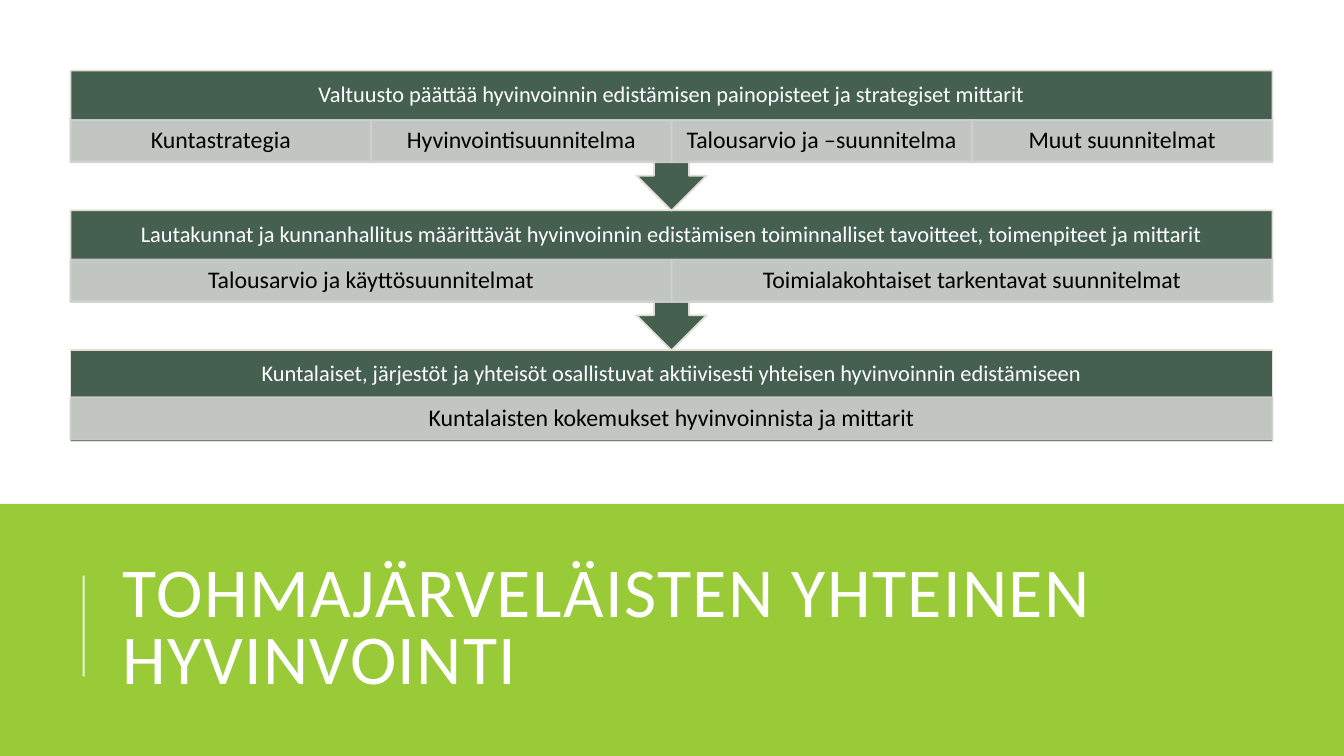
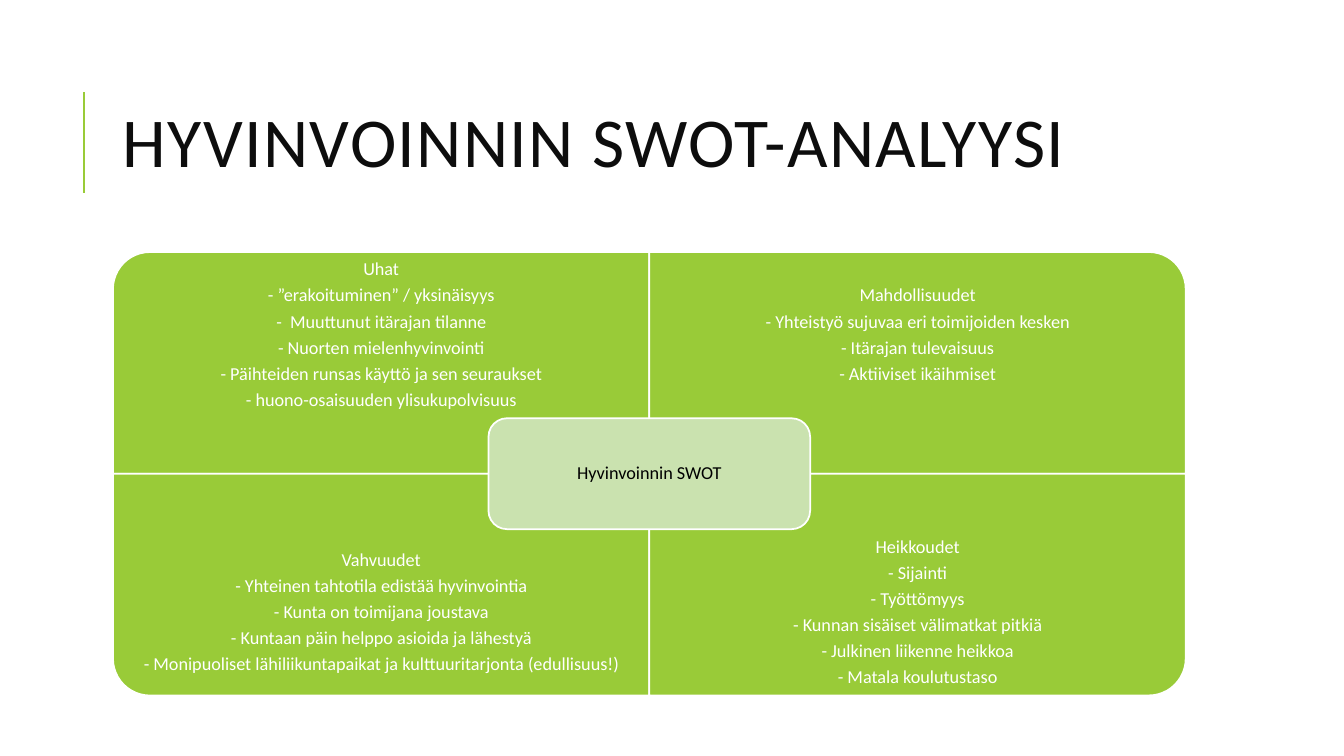
"""Build the municipal wellbeing slides: the decision chain and the SWOT analysis."""
import dataclasses

import lxml.etree
import pptx
import pptx.dml.color
import pptx.enum.shapes
import pptx.enum.text
import pptx.oxml.ns
import pptx.util

Inches = pptx.util.Inches
Pt = pptx.util.Pt
Shapes = pptx.enum.shapes.MSO_SHAPE
Align = pptx.enum.text.PP_ALIGN
Anchor = pptx.enum.text.MSO_ANCHOR
qn = pptx.oxml.ns.qn


@dataclasses.dataclass(frozen=True)
class Theme:
    font: str = "Calibri"
    white: str = "FFFFFF"
    black: str = "000000"
    ink: str = "0D0D0D"
    lime: str = "99CB38"
    pale_lime: str = "CAE2AF"
    forest: str = "455F51"
    sand: str = "E3DED1"
    mist: str = "CFD2D0"
    title_size: int = 50
    detail_size: int = 17
    header_size: int = 16
    swot_size: int = 13
    outline: float = 1.25
    rule: float = 1.5


THEME = Theme()
TITLE_LEFT = 1.12

TIER_LEFT, TIER_WIDTH, TIER_HEIGHT, BAR_HEIGHT = 0.7, 11.92, 1.39, 0.91
TIER_TOP, LAST_TIER_TOP, DETAIL_HEIGHT = 0.7, 3.47, 0.42
TIERS = [
    ("Valtuusto päättää hyvinvoinnin edistämisen painopisteet ja strategiset mittarit",
     ["Kuntastrategia", "Hyvinvointisuunnitelma", "Talousarvio ja –suunnitelma",
      "Muut suunnitelmat"]),
    ("Lautakunnat ja kunnanhallitus määrittävät hyvinvoinnin edistämisen toiminnalliset "
     "tavoitteet, toimenpiteet ja mittarit",
     ["Talousarvio ja käyttösuunnitelmat", "Toimialakohtaiset tarkentavat suunnitelmat"]),
    ("Kuntalaiset, järjestöt ja yhteisöt osallistuvat aktiivisesti yhteisen hyvinvoinnin "
     "edistämiseen",
     ["Kuntalaisten kokemukset hyvinvoinnista ja mittarit"]),
]

SWOT_TOP, QUADRANT_WIDTH, QUADRANT_HEIGHT, QUADRANT_TEXT_HEIGHT = 2.5, 5.32, 2.2, 1.65
CORE_WIDTH, CORE_HEIGHT = 3.19, 1.1
QUADRANTS = [
    (0, 0, 270, ["Uhat", "- ”erakoituminen” / yksinäisyys", "-  Muuttunut itärajan tilanne",
                 "- Nuorten mielenhyvinvointi",
                 "- Päihteiden runsas käyttö ja sen seuraukset",
                 "- huono-osaisuuden ylisukupolvisuus"]),
    (1, 0, 0, ["Mahdollisuudet", "- Yhteistyö sujuvaa eri toimijoiden kesken",
               "- Itärajan tulevaisuus", "- Aktiiviset ikäihmiset"]),
    (0, 1, 180, ["Vahvuudet", "- Yhteinen tahtotila edistää hyvinvointia",
                 "- Kunta on toimijana joustava",
                 "- Kuntaan päin helppo asioida ja lähestyä",
                 "- Monipuoliset lähiliikuntapaikat ja kulttuuritarjonta (edullisuus!)"]),
    (1, 1, 90, ["Heikkoudet", "- Sijainti", "- Työttömyys",
                "- Kunnan sisäiset välimatkat pitkiä", "- Julkinen liikenne heikkoa",
                "- Matala koulutustaso"]),
]


def apply(target, values):
    for name, value in values.items():
        setattr(target, name, value)


def rgb(color):
    return pptx.dml.color.RGBColor.from_string(color)


def fade(figure, opacity):
    for swatch in figure.element.spPr.iter(qn("a:srgbClr")):
        lxml.etree.SubElement(swatch, qn("a:alpha"), val=str(opacity * 1000))


class Deck:
    def __init__(self, theme):
        self.theme = theme
        self.presentation = pptx.Presentation()
        apply(self.presentation, {"slide_width": Inches(13.33), "slide_height": Inches(7.5)})
        self.slide = None

    def new_slide(self):
        self.slide = self.presentation.slides.add_slide(self.presentation.slide_layouts[6])

    def panel(self, kind, box, fill, line=None, opacity=100, rotation=0):
        panel = self.slide.shapes.add_shape(kind, *map(Inches, box))
        panel.shadow.inherit = False
        panel.rotation = rotation
        panel.fill.solid()
        panel.fill.fore_color.rgb = rgb(fill)
        if line:
            panel.line.width = Pt(self.theme.outline)
            panel.line.color.rgb = rgb(line)
        else:
            panel.line.fill.background()
        if opacity < 100:
            fade(panel, opacity)
        return panel

    def put_text(self, holder, lines, size, color, insets=(0.1, 0.05), spacing=0.9,
                 gap=0.35, align=Align.CENTER, tracking=0):
        side, edge = map(Inches, insets)
        frame = holder.text_frame
        apply(frame, {"word_wrap": True, "vertical_anchor": Anchor.MIDDLE,
                      "margin_left": side, "margin_right": side,
                      "margin_top": edge, "margin_bottom": edge})
        for index, line in enumerate(lines):
            paragraph = frame.add_paragraph() if index else frame.paragraphs[0]
            apply(paragraph, {"alignment": align, "line_spacing": spacing,
                              "space_after": Pt(size * gap)})
            run = paragraph.add_run()
            run.text = line
            apply(run.font, {"name": self.theme.font, "size": Pt(size)})
            run.font.color.rgb = rgb(color)
        if tracking:
            for properties in holder.element.iter(qn("a:rPr")):
                properties.set("spc", str(tracking * 100))

    def label(self, box, lines, size, color, **style):
        holder = self.slide.shapes.add_textbox(*map(Inches, box))
        self.put_text(holder, lines, size, color, **style)

    def title(self, text, top, color, rule_color, opacity=100):
        self.label((TITLE_LEFT, top, 10.63, 1.64), [text], self.theme.title_size, color,
                   spacing=0.8, gap=0, align=Align.LEFT, tracking=1)
        rule_top = top + 0.27
        rule = self.slide.shapes.add_connector(
            pptx.enum.shapes.MSO_CONNECTOR.STRAIGHT,
            *map(Inches, (0.83, rule_top + 1, 0.83, rule_top)))
        rule.line.width = Pt(self.theme.rule)
        rule.line.color.rgb = rgb(rule_color)
        if opacity < 100:
            fade(rule, opacity)
        lxml.etree.SubElement(rule.element.spPr, qn("a:effectLst"))

    def tier(self, top, header, details, last):
        theme = self.theme
        kind, height, header_height = (
            (Shapes.RECTANGLE, BAR_HEIGHT, 0.47) if last
            else (Shapes.DOWN_ARROW_CALLOUT, TIER_HEIGHT, 0.49))
        self.panel(kind, (TIER_LEFT, top, TIER_WIDTH, height), theme.forest, theme.sand)
        self.label((TIER_LEFT, top, TIER_WIDTH, 0.49), [header], theme.header_size,
                   theme.white, insets=(0.12, 0.12))
        width = TIER_WIDTH / len(details)
        for column, detail in enumerate(details):
            box = (TIER_LEFT + column * width, top + header_height, width, DETAIL_HEIGHT)
            cell = self.panel(Shapes.RECTANGLE, box, theme.mist, theme.mist, opacity=90)
            self.put_text(cell, [detail], theme.detail_size, theme.black,
                          insets=(0.13, 0.02))

    def quadrant(self, column, row, rotation, lines):
        theme = self.theme
        left = TITLE_LEFT + column * QUADRANT_WIDTH
        top = SWOT_TOP + row * QUADRANT_HEIGHT
        width, height = QUADRANT_WIDTH, QUADRANT_HEIGHT
        if rotation % 180:
            width, height = height, width
        box = (left + (QUADRANT_WIDTH - width) / 2, top + (QUADRANT_HEIGHT - height) / 2,
               width, height)
        self.panel(Shapes.ROUND_1_RECTANGLE, box, theme.lime, theme.white, rotation=rotation)
        text_top = top + row * (QUADRANT_HEIGHT - QUADRANT_TEXT_HEIGHT)
        self.label((left, text_top, QUADRANT_WIDTH, QUADRANT_TEXT_HEIGHT), lines,
                   theme.swot_size, theme.white, insets=(0.1, 0.1))

    def core(self, text):
        theme = self.theme
        box = (TITLE_LEFT + QUADRANT_WIDTH - CORE_WIDTH / 2,
               SWOT_TOP + QUADRANT_HEIGHT - CORE_HEIGHT / 2, CORE_WIDTH, CORE_HEIGHT)
        core = self.panel(Shapes.ROUNDED_RECTANGLE, box, theme.pale_lime, theme.white)
        self.put_text(core, [text], theme.swot_size, theme.black, insets=(0.05, 0.05))


def main():
    deck = Deck(THEME)

    deck.new_slide()
    deck.panel(Shapes.RECTANGLE, (0, 5, 13.33, 2.5), THEME.lime)
    deck.title("TOHMAJÄRVELÄISTEN YHTEINEN HYVINVOINTI", 5.44, THEME.white, THEME.white,
               opacity=80)
    last = len(TIERS) - 1
    pitch = (LAST_TIER_TOP - TIER_TOP) / last
    for index in range(last, -1, -1):
        deck.tier(TIER_TOP + index * pitch, *TIERS[index], last=index == last)

    deck.new_slide()
    deck.title("HYVINVOINNIN SWOT-ANALYYSI", 0.64, THEME.ink, THEME.lime)
    for quadrant in QUADRANTS:
        deck.quadrant(*quadrant)
    deck.core("Hyvinvoinnin SWOT")

    deck.presentation.save("out.pptx")


if __name__ == "__main__":
    main()
